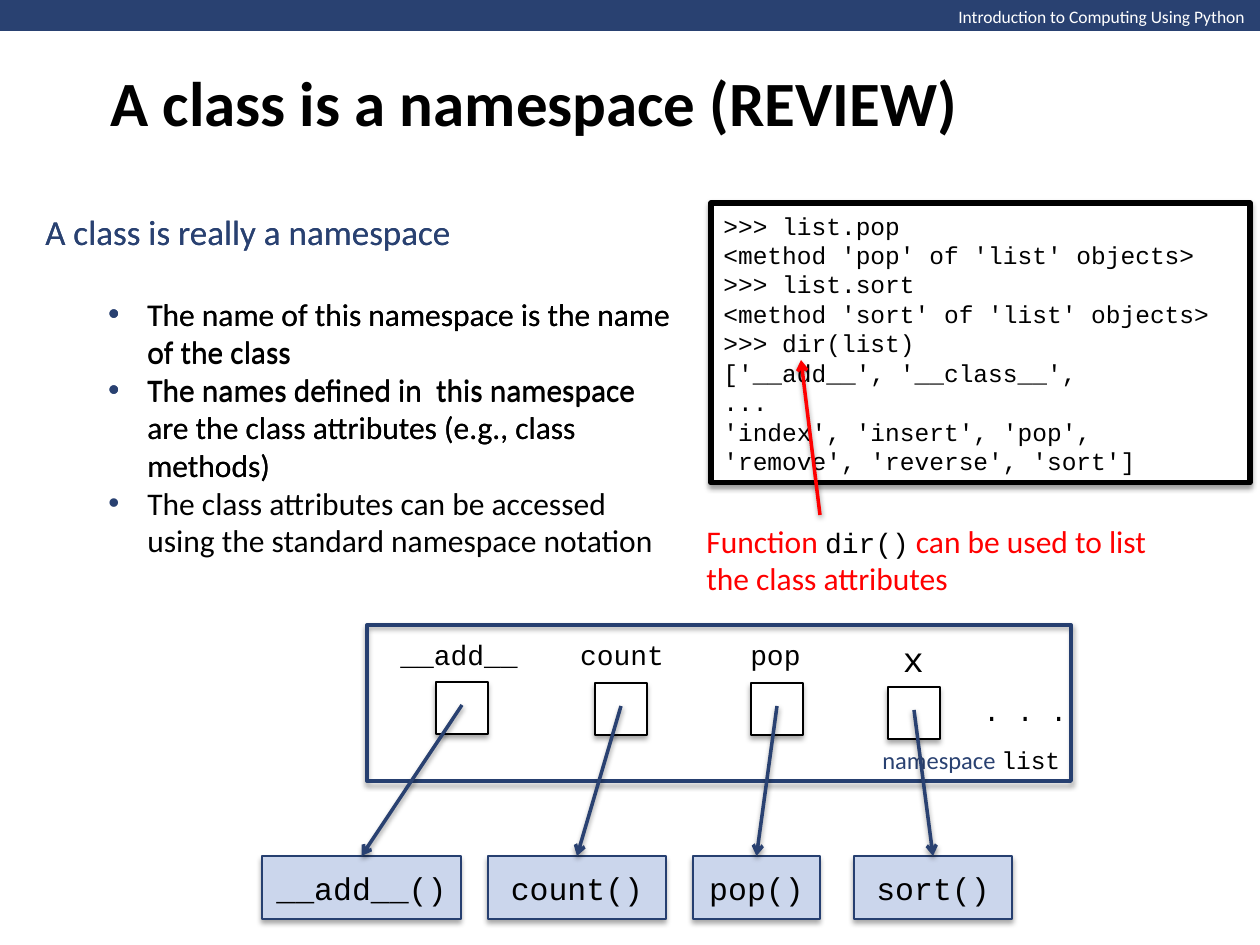
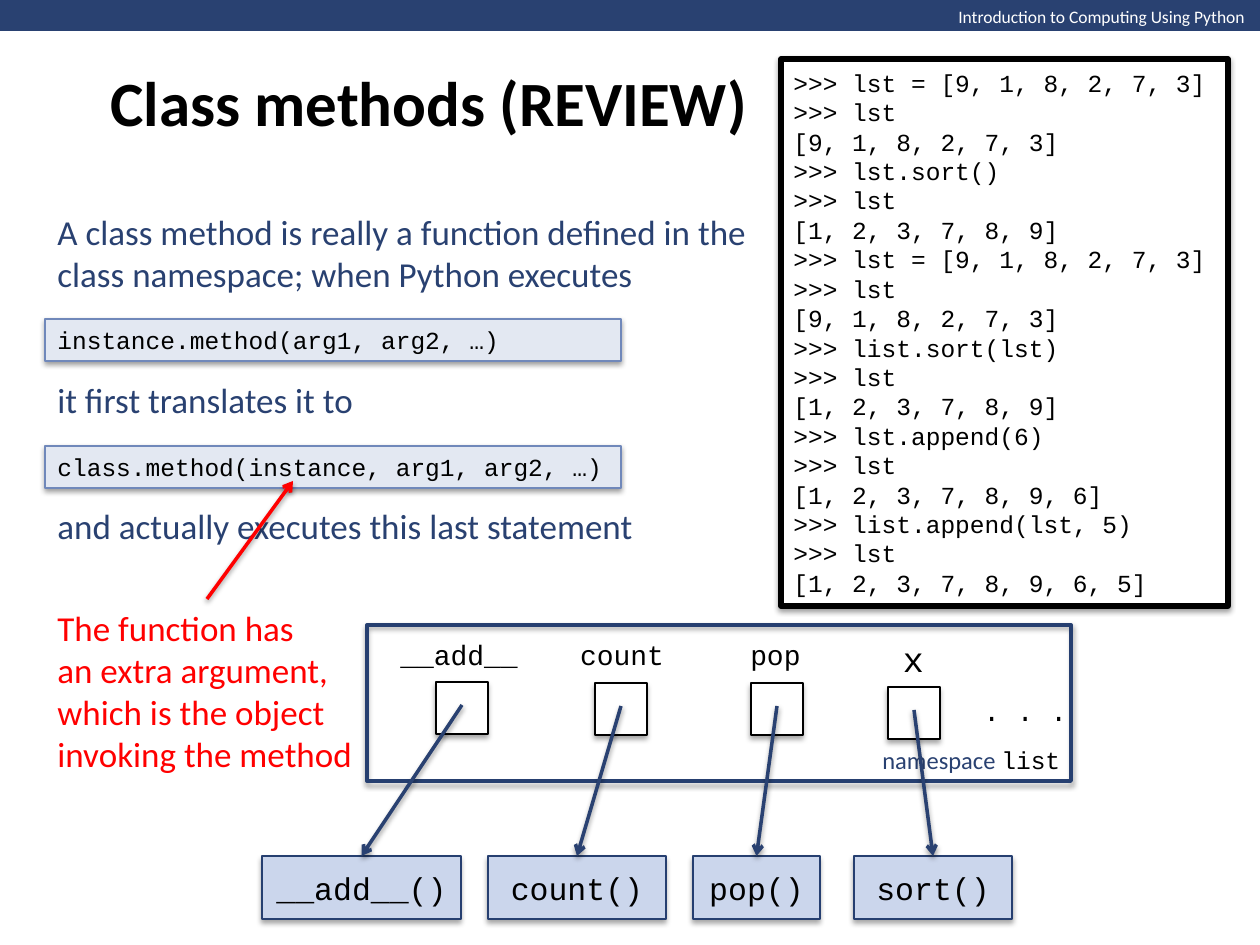
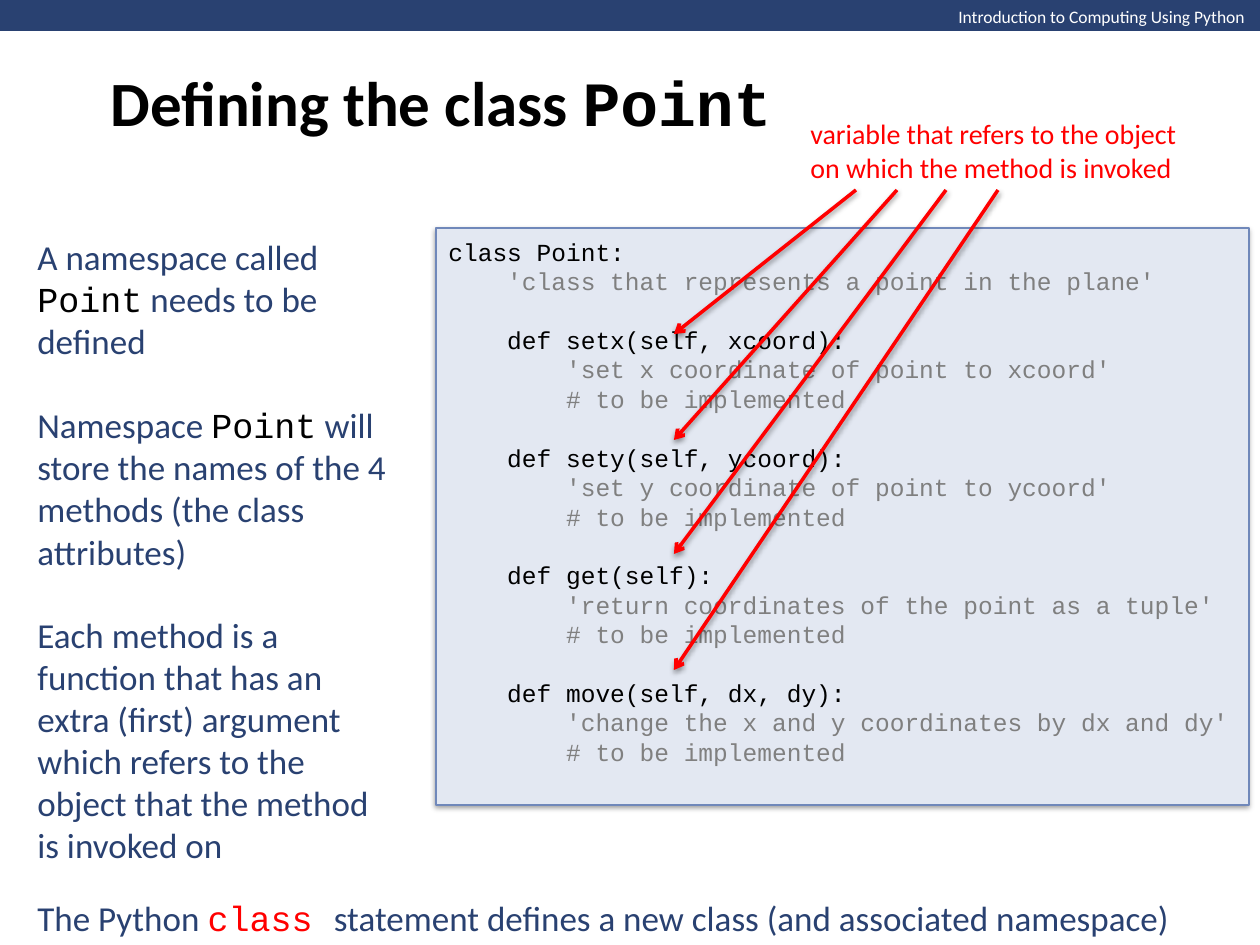
from dataclasses import dataclass

from lxml import etree
from pptx import Presentation
from pptx.dml.color import RGBColor
from pptx.enum.shapes import MSO_CONNECTOR, MSO_SHAPE
from pptx.enum.text import MSO_ANCHOR, MSO_AUTO_SIZE, PP_ALIGN
from pptx.oxml.ns import qn
from pptx.util import Pt

RECT = MSO_SHAPE.RECTANGLE
STRAIGHT = MSO_CONNECTOR.STRAIGHT
TOP, MIDDLE = MSO_ANCHOR.TOP, MSO_ANCHOR.MIDDLE
CENTER = PP_ALIGN.CENTER
GROW = MSO_AUTO_SIZE.SHAPE_TO_FIT_TEXT

EMU_PER_PX = 914400 / 126
COLORS = {
    "navy": "294171", "edge": "263F70", "function": "CBD6EC",
    "panel": "E3E8F2", "panel edge": "7088BA", "red": "FF0000",
    "black": "000000", "white": "FFFFFF",
    "docstring": "7F7F7F", "comment": "808080",
}
SANS, MONO = "Calibri", "Courier New"
STYLES = {  # font, size, colour
    "header": (SANS, 10, "white"),
    "title": (SANS, 36, "black"), "title code": (MONO, 36, "black"),
    "body": (SANS, 20, "navy"), "body code": (MONO, 20, "black"),
    "keyword": (MONO, 20, "red"), "warning": (SANS, 20, "red"),
    "bullet": (SANS, 18, "black"), "remark": (SANS, 18, "red"),
    "small remark": (SANS, 16, "red"), "name": (MONO, 16, "black"),
    "function": (MONO, 18, "black"), "caption": (SANS, 14, "navy"),
    "code": (MONO, 14, "black"), "docstring": (MONO, 14, "docstring"),
    "comment": (MONO, 14, "comment"),
}
BODY_LINE, CODE_LINE = 24, 16.8  # line heights in points


@dataclass
class Para:
    runs: list
    gap: float = 0
    bullet: bool = False


HEADER = "Introduction to Computing Using Python"

NAMESPACE_FRAME = (367, 625, 704, 156)
CELL, LABEL_TOP, FUNCTION_TOP, FUNCTION_HEIGHT = 52, 631, 856, 63
# name, style, label (left, width, height), cell (left, top), function, (left, width)
ATTRIBUTES = [
    ("__add__", "name", (367, 184, 47), (436, 682), "__add__()", (262, 199)),
    ("count", "name", (551, 142, 47), (595, 683), "count()", (488, 178)),
    ("pop", "name", (731, 89, 47), (751, 683), "pop()", (693, 127)),
    ("x", "body code", (869, 89, 55), (888, 687), "sort()", (854, 158)),
]

NAMESPACE_HEADING = "A class is really a namespace"
NAMESPACE_FACTS = [
    "The name of this namespace is the name of the class",
    "The names defined in  this namespace are the class attributes (e.g., class methods)",
    "The class attributes can be accessed using the standard namespace notation",
]
DIR_SESSION = """>>> list.pop
<method 'pop' of 'list' objects>
>>> list.sort
<method 'sort' of 'list' objects>
>>> dir(list)
['__add__', '__class__',
...
'index', 'insert', 'pop', 'remove', 'reverse', 'sort']"""
DIR_REMARK = [
    Para([("Function ", "remark"), ("dir()", "name"), (" can be used to list", "remark")]),
    Para([("the class attributes", "remark")]),
]

METHOD_STEPS = [
    Para([("A class method is really a function defined in the class namespace; "
           "when Python executes", "body")]),
    Para([("it first translates it to", "body")], 2 * BODY_LINE),
    Para([("and actually executes this last statement", "body")], 2 * BODY_LINE),
]
CALL_FORMS = [
    (319, "instance.method(arg1, arg2, …)"),
    (446, "class.method(instance, arg1, arg2, …)"),
]
EXTRA_ARGUMENT = ["The function has", "an extra argument,",
                  "which is the object", "invoking the method"]
SORT_SESSION = """>>> lst = [9, 1, 8, 2, 7, 3]
>>> lst
[9, 1, 8, 2, 7, 3]
>>> lst.sort()
>>> lst
[1, 2, 3, 7, 8, 9]
>>> lst = [9, 1, 8, 2, 7, 3]
>>> lst
[9, 1, 8, 2, 7, 3]
>>> list.sort(lst)
>>> lst
[1, 2, 3, 7, 8, 9]
>>> lst.append(6)
>>> lst
[1, 2, 3, 7, 8, 9, 6]
>>> list.append(lst, 5)
>>> lst
[1, 2, 3, 7, 8, 9, 6, 5]"""

POINT_NAMESPACE = [
    Para([("A namespace called ", "body"), ("Point", "body code"),
          (" needs to be defined", "body")]),
    Para([("Namespace ", "body"), ("Point", "body code"),
          (" will store the names of the 4 methods (the class", "body")], BODY_LINE),
    Para([("attributes)", "body")]),
]
POINT_METHODS = ["Each method is a function that has an extra (first) argument",
                 "which refers to the object that the method is invoked on"]
CLASS_STATEMENT = [
    Para([("The Python ", "body"), ("class ", "keyword"),
          ("statement defines a new class (and associated namespace)", "body")]),
]
SELF_REMARK = ["variable that refers to the object", "on which the method is invoked"]
SELF_ARROWS = [(856, 334), (897, 440), (946, 554), (998, 670)]  # start x, end y
POINT_CODE = """class Point:
    'class that represents a point in the plane'

    def setx(self, xcoord):
        'set x coordinate of point to xcoord'
        # to be implemented

    def sety(self, ycoord):
        'set y coordinate of point to ycoord'
        # to be implemented

    def get(self):
        'return coordinates of the point as a tuple'
        # to be implemented

    def move(self, dx, dy):
        'change the x and y coordinates by dx and dy'
        # to be implemented"""


def px(length):
    return round(length * EMU_PER_PX)


def rgb(color):
    return RGBColor.from_string(COLORS[color])


def lines(texts, style):
    return [Para([(text, style)]) for text in texts]


def code_lines(source):
    """One paragraph per code line; an empty line becomes space before the next."""
    paras, gap = [], 0
    for line in source.splitlines():
        if not line:
            gap += CODE_LINE
            continue
        style = "code"
        if line.startswith(" "):
            style = {"'": "docstring", "#": "comment"}.get(line.lstrip()[0], "code")
        paras.append(Para([(line, style)], gap))
        gap = 0
    return paras


def add_bullet(paragraph):
    properties = paragraph._p.get_or_add_pPr()
    properties.set("marL", str(px(102)))
    properties.set("indent", str(px(-39)))
    color = etree.SubElement(properties, qn("a:buClr"))
    etree.SubElement(color, qn("a:srgbClr"), val=COLORS["navy"])
    etree.SubElement(properties, qn("a:buFont"), typeface="Arial")
    etree.SubElement(properties, qn("a:buChar"), char="•")


def write(frame, paras, anchor=MIDDLE, align=None, wrap=True):
    frame.word_wrap = wrap
    frame.vertical_anchor = anchor
    if not wrap:
        frame.auto_size = GROW
    for index, para in enumerate(paras):
        paragraph = frame.add_paragraph() if index else frame.paragraphs[0]
        if para.bullet:
            add_bullet(paragraph)
        if para.gap:
            paragraph.space_before = Pt(para.gap)
        paragraph.alignment = align or PP_ALIGN.LEFT
        for text, style in para.runs:
            run = paragraph.add_run()
            run.text = text
            font, size, color = STYLES[style]
            run.font.name, run.font.size = font, Pt(size)
            run.font.color.rgb = rgb(color)
            run.font.bold = style.startswith("title")


def add_text(slide, box, paras, **layout):
    frame = slide.shapes.add_textbox(*map(px, box)).text_frame
    write(frame, paras, **layout)


def add_shadow(shape, distance, opacity):
    effects = etree.SubElement(shape._element.spPr, qn("a:effectLst"))
    shadow = etree.SubElement(effects, qn("a:outerShdw"), blurRad=str(Pt(3.1)),
                              dist=str(Pt(distance)), dir="5400000", rotWithShape="0")
    color = etree.SubElement(shadow, qn("a:srgbClr"), val=COLORS["black"])
    etree.SubElement(color, qn("a:alpha"), val=str(opacity * 1000))


def add_box(slide, box, fill, edge, weight, distance=1.8, opacity=35):
    shape = slide.shapes.add_shape(RECT, *map(px, box))
    if fill:
        shape.fill.solid()
        shape.fill.fore_color.rgb = rgb(fill)
    else:
        shape.fill.background()
    shape.line.color.rgb = rgb(edge)
    shape.line.width = Pt(weight)
    add_shadow(shape, distance, opacity)
    return shape


def add_session(slide, box, source):
    panel = add_box(slide, box, "white", "black", 3, 1.6, 38)
    write(panel.text_frame, code_lines(source))


def add_code(slide, box, source):
    panel = add_box(slide, box, "panel", "panel edge", 0.75, 1.6, 38)
    write(panel.text_frame, code_lines(source))
    return panel


def add_arrow(slide, start, end, color, target=None):
    arrow = slide.shapes.add_connector(STRAIGHT, *map(px, start + end))
    if target is not None:
        arrow.end_connect(target, 0)
    arrow.line.color.rgb = rgb(color)
    arrow.line.width = Pt(2)
    etree.SubElement(arrow.line._get_or_add_ln(), qn("a:tailEnd"), type="arrow")
    add_shadow(arrow, 1.6, 38)


def add_slide(deck, title_runs):
    slide = deck.slides.add_slide(deck.slide_layouts[6])
    band = slide.shapes.add_shape(RECT, 0, 0, px(1261), px(31))
    band.shadow.inherit = False
    band.fill.solid()
    band.fill.fore_color.rgb = rgb("navy")
    band.line.fill.background()
    add_text(slide, (946, 0, 315, 34), lines([HEADER], "header"), anchor=TOP, wrap=False)
    add_text(slide, (98, 0, 1099, 203), [Para(title_runs)])
    return slide


def draw_namespace(slide):
    """Names in the list namespace, each pointing to its function."""
    add_box(slide, NAMESPACE_FRAME, None, "edge", 2.25)
    add_text(slide, (870, 738, 204, 43),
             [Para([("namespace ", "caption"), ("list", "code")])], wrap=False)
    add_text(slide, (971, 687, 111, 47), lines([". . ."], "name"), wrap=False)
    for name, style, label, cell, function, (left, width) in ATTRIBUTES:
        label_left, label_width, label_height = label
        cell_left, cell_top = cell
        add_box(slide, (cell_left, cell_top, CELL, CELL), "white", "black", 0.75)
        add_text(slide, (label_left, LABEL_TOP, label_width, label_height),
                 lines([name], style), align=CENTER)
        target = add_box(slide, (left, FUNCTION_TOP, width, FUNCTION_HEIGHT),
                         "function", "edge", 0.75)
        write(target.text_frame, lines([function], "function"), align=CENTER)
        add_arrow(slide, (cell_left + CELL // 2, cell_top + 23),
                  (left + width // 2, FUNCTION_TOP), "navy", target)


def build_namespace_slide(deck):
    slide = add_slide(deck, [("A class is a namespace (REVIEW)", "title")])
    draw_namespace(slide)
    for count, height in ((2, 289), (3, 364)):
        facts = [Para([(fact, "bullet")], bullet=True) for fact in NAMESPACE_FACTS[:count]]
        facts[0].gap = BODY_LINE
        add_text(slide, (33, 203, 658, height), lines([NAMESPACE_HEADING], "body") + facts)
    add_text(slide, (694, 515, 481, 89), DIR_REMARK, wrap=False)
    add_session(slide, (711, 203, 539, 280), DIR_SESSION)
    add_arrow(slide, (820, 515), (801, 360), "red")


def build_methods_slide(deck):
    slide = add_slide(deck, [("Class methods (REVIEW)", "title")])
    add_text(slide, (45, 203, 731, 352), METHOD_STEPS)
    draw_namespace(slide)
    add_session(slide, (781, 59, 447, 547), SORT_SESSION)
    for top, call in CALL_FORMS:
        add_code(slide, (45, top, 576, 42), call)
    add_text(slide, (45, 599, 324, 183), lines(EXTRA_ARGUMENT, "warning"), wrap=False)
    add_arrow(slide, (207, 599), (293, 481), "red")


def build_point_slide(deck):
    slide = add_slide(deck, [("Defining the class ", "title"), ("Point", "title code")])
    add_text(slide, (25, 228, 391, 352), POINT_NAMESPACE)
    add_text(slide, (25, 606, 367, 267), lines(POINT_METHODS, "body"))
    panel = add_code(slide, (436, 228, 813, 577), POINT_CODE)
    panel.text_frame.margin_bottom = px(36)
    add_text(slide, (25, 890, 1158, 55), CLASS_STATEMENT, wrap=False)
    add_text(slide, (798, 110, 398, 81), lines(SELF_REMARK, "small remark"), wrap=False)
    for start_x, end_y in SELF_ARROWS:
        add_arrow(slide, (start_x, 190), (674, end_y), "red")


def main():
    deck = Presentation()
    deck.slide_width, deck.slide_height = px(1260), px(945)
    build_namespace_slide(deck)
    build_methods_slide(deck)
    build_point_slide(deck)
    deck.save("out.pptx")


if __name__ == "__main__":
    main()
